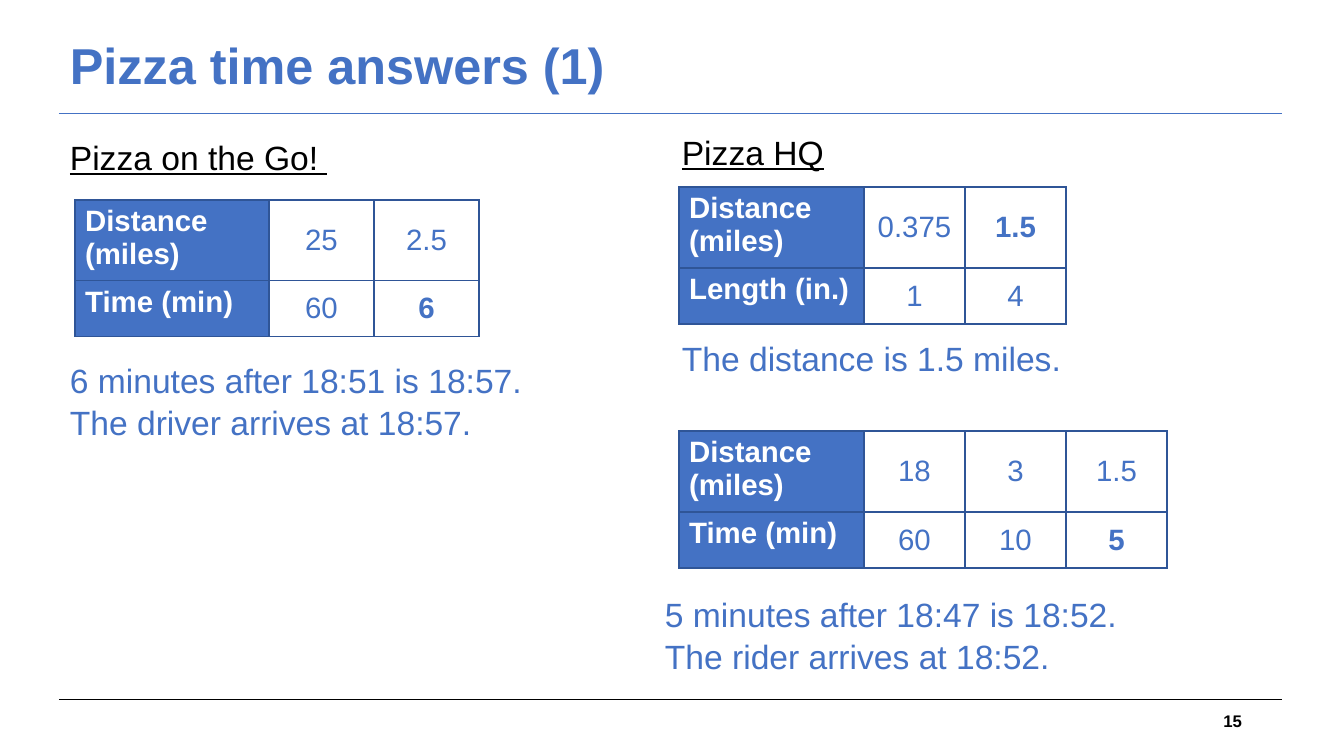
from lxml.etree import SubElement
from pptx import Presentation
from pptx.dml.color import RGBColor
from pptx.enum.shapes import MSO_CONNECTOR as Link
from pptx.enum.text import MSO_ANCHOR as Anchor, PP_ALIGN as Align
from pptx.oxml import parse_xml
from pptx.oxml.ns import nsdecls, qn
from pptx.util import Emu, Pt

BLUE = RGBColor(0x44, 0x72, 0xC4)
NAVY = RGBColor(0x2F, 0x55, 0x97)
BLACK = RGBColor(0, 0, 0)
WHITE = RGBColor(0xFF, 0xFF, 0xFF)

SCALE = 914400 / 100.8
WIDTH, HEIGHT = 1344, 756


def px(num):
    return Emu(round(num * SCALE))


class Deck:
    font = "Arial"

    def __init__(self):
        self.prs = Presentation()
        self.prs.slide_width, self.prs.slide_height = px(WIDTH), px(HEIGHT)
        self.slide = self.prs.slides.add_slide(self.prs.slide_layouts[6])

    def run(self, para, text, size, color, bold=False, under=False):
        run = para.add_run()
        run.text = text
        font = run.font
        font.name, font.size, font.bold = self.font, Pt(size), bold
        font.color.rgb = color
        if under:
            font.underline = True

    def text(self, box, lines, size=24, color=BLUE, bold=False, under=False,
             align=Align.LEFT, anchor=Anchor.TOP, space=1.0, before=0):
        frame = self.slide.shapes.add_textbox(*map(px, box)).text_frame
        frame.word_wrap = True
        frame.vertical_anchor = anchor
        for i, line in enumerate(lines):
            para = frame.add_paragraph() if i else frame.paragraphs[0]
            para.alignment, para.line_spacing = align, space
            para.space_before = Pt(before)
            self.run(para, line, size, color, bold, under)

    def rule(self, y, color):
        line = self.slide.shapes.add_connector(
            Link.STRAIGHT, px(59), px(y), px(1282), px(y))
        line.line.color.rgb = color
        line.line.width = Pt(0.75)
        SubElement(line._element.spPr, qn("a:effectLst"))

    def edge(self, cell):
        props = cell._tc.get_or_add_tcPr()
        for i, side in enumerate("LRTB"):
            props.insert(i, parse_xml(
                f'<a:ln{side} {nsdecls("a")} w="12700"><a:solidFill>'
                f'<a:srgbClr val="{NAVY}"/></a:solidFill></a:ln{side}>'))

    def table(self, x, y, cols, rows, data, answer):
        """Draw a ratio table; the cell at answer is bold."""
        table = self.slide.shapes.add_table(
            len(rows), len(cols), px(x), px(y),
            px(sum(cols)), px(sum(rows))).table
        table.first_row = table.horz_banding = False
        for col, wide in zip(table.columns, cols):
            col.width = px(wide)
        for row, high in zip(table.rows, rows):
            row.height = px(high)
        for r, line in enumerate(data):
            for c, word in enumerate(line):
                cell, head = table.cell(r, c), c == 0
                para = cell.text_frame.paragraphs[0]
                if head:
                    cell.fill.solid()
                    cell.fill.fore_color.rgb = BLUE
                else:
                    cell.fill.background()
                    cell.vertical_anchor = Anchor.MIDDLE
                    para.alignment = Align.CENTER
                self.run(para, word, 21, WHITE if head else BLUE,
                         head or (r, c) == answer)
                self.edge(cell)


def main():
    deck = Deck()

    # Frame: rules, title and page number
    deck.rule(700, BLACK)
    deck.rule(114, BLUE)
    deck.text((60, 12, 876, 112), ["Pizza time answers (1)"], 36, bold=True,
              anchor=Anchor.MIDDLE, space=0.9)
    deck.text((950, 701, 302, 40), ["15"], 12, BLACK, bold=True,
              align=Align.RIGHT, anchor=Anchor.MIDDLE)

    # Left column: first shop
    deck.text((60, 132, 337, 50), ["Pizza on the Go! "], color=BLACK,
              under=True, before=1.5)
    deck.table(75, 200, [194, 105, 105], [76, 56],
               [["Distance (miles)", "25", "2.5"],
                ["Time (min)", "60", "6"]], (1, 2))
    deck.text((60, 355, 571, 92), ["6 minutes after 18:51 is 18:57.",
                                   "The driver arrives at 18:57."], before=1.5)

    # Right column: second shop, distance then time
    deck.text((672, 127, 337, 50), ["Pizza HQ"], color=BLACK,
              under=True, before=1.5)
    deck.table(679, 187, [185, 101, 101], [81, 56],
               [["Distance (miles)", "0.375", "1.5"],
                ["Length (in.)", "1", "4"]], (0, 2))
    deck.text((672, 333, 650, 50), ["The distance is 1.5 miles."], before=1.5)
    deck.table(679, 431, [185, 101, 101, 101], [81, 56],
               [["Distance (miles)", "18", "3", "1.5"],
                ["Time (min)", "60", "10", "5"]], (1, 3))
    deck.text((655, 589, 650, 92), ["5 minutes after 18:47 is 18:52.",
                                    "The rider arrives at 18:52."], before=1.5)

    deck.prs.save("out.pptx")


if __name__ == "__main__":
    main()
